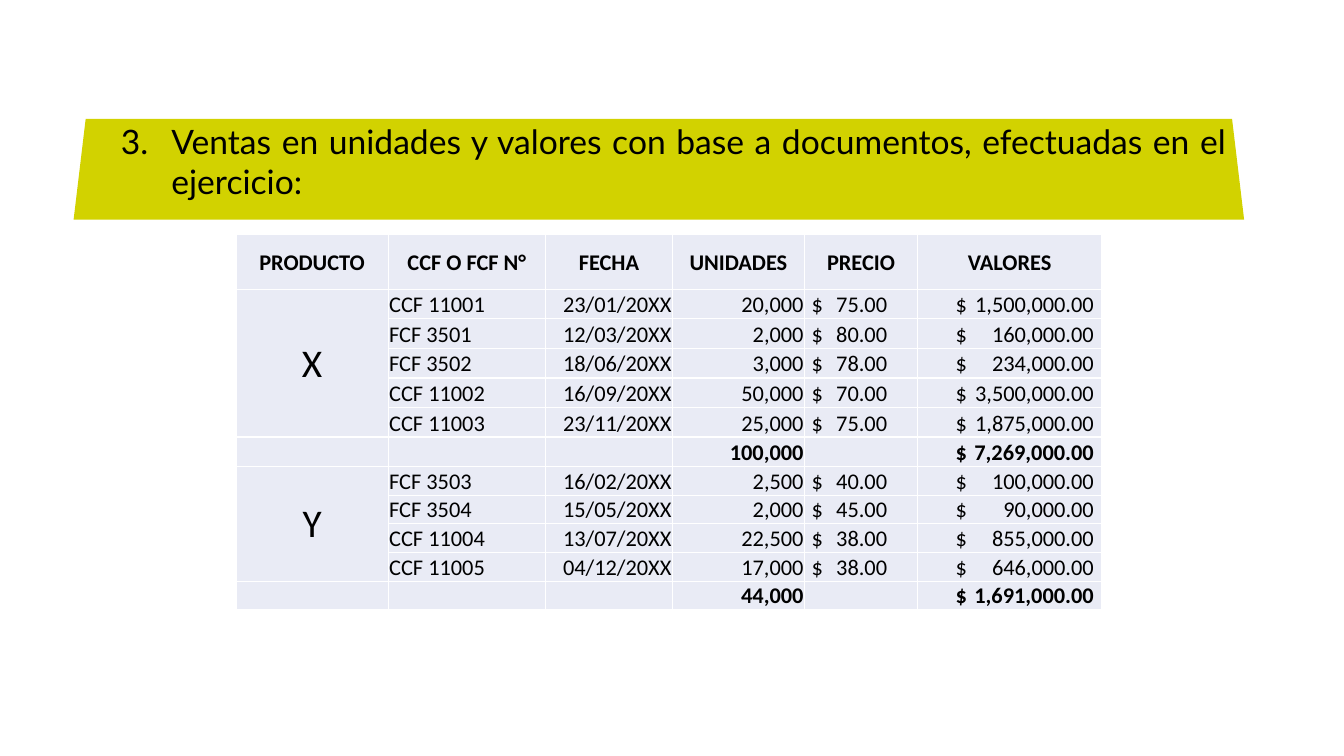
import pptx
import pptx.util
import pptx.dml.color
import pptx.enum.text
import pptx.oxml.ns
import lxml.etree

Inches, Pt = pptx.util.Inches, pptx.util.Pt
ALIGN = pptx.enum.text.PP_ALIGN
ANCHOR = pptx.enum.text.MSO_ANCHOR

HEADERS = ["PRODUCTO", "CCF O FCF N°", "FECHA", "UNIDADES", "PRECIO", "VALORES"]
SALES = {
    "X": [("CCF 11001", "23/01/20XX", 20000, 75),
          ("FCF 3501", "12/03/20XX", 2000, 80),
          ("FCF 3502", "18/06/20XX", 3000, 78),
          ("CCF 11002", "16/09/20XX", 50000, 70),
          ("CCF 11003", "23/11/20XX", 25000, 75)],
    "Y": [("FCF 3503", "16/02/20XX", 2500, 40),
          ("FCF 3504", "15/05/20XX", 2000, 45),
          ("CCF 11004", "13/07/20XX", 22500, 38),
          ("CCF 11005", "04/12/20XX", 17000, 38)],
}
COL_WIDTHS = [1.51, 1.56, 1.26, 1.31, 1.12, 1.83]
ROW_HEIGHTS = [0.54] + [1.76 / 6] * 6 + [1.42 / 5] * 5
# Body columns: alignment, left margin, right tab for the amount
COL_FORMATS = [(ALIGN.CENTER, 0.01, None), (ALIGN.LEFT, 0.01, None),
               (ALIGN.RIGHT, 0.01, None), (ALIGN.RIGHT, 0.01, None),
               (ALIGN.LEFT, 0.07, 0.75), (ALIGN.LEFT, 0.38, 1.37)]


def rgb(color):
    return pptx.dml.color.RGBColor.from_string(color)


def sub(parent, tag, **attrs):
    element = lxml.etree.SubElement(parent, pptx.oxml.ns.qn(tag))
    for name, value in attrs.items():
        element.set(name, str(value))
    return element


def apply(target, values):
    for name, value in values.items():
        setattr(target, name, value)


def money(amount):
    return f"$\t{amount:,.2f}"


class SlideBuilder:
    ink, banner_fill, cell_fill, border = "000000", "D2D200", "E9EBF5", "FFFFFF"
    title_font, table_font = "Lato", "Calibri"

    def __init__(self, prs):
        self.s = prs.slides.add_slide(prs.slide_layouts[5])

    def add_text(self, p, text, font, size, bold=False):
        r = p.add_run()
        r.text = text
        apply(r.font, {"name": font, "size": Pt(size), "bold": bold})
        r.font.color.rgb = rgb(self.ink)

    def banner(self, corners):
        points = [(Inches(x), Inches(y)) for x, y in corners]
        fb = self.s.shapes.build_freeform(*points[0])
        fb.add_line_segments(points[1:], close=True)
        sp = fb.convert_to_shape()
        sp.shadow.inherit = False
        sp.fill.solid()
        sp.fill.fore_color.rgb = rgb(self.banner_fill)
        sp.line.fill.background()
        self.s.shapes.title._element.addprevious(sp._element)

    def title(self, text, number, left, top, width, height):
        sp = self.s.shapes.title
        apply(sp, {"left": Inches(left), "top": Inches(top),
                   "width": Inches(width), "height": Inches(height)})
        tf = sp.text_frame
        apply(tf, {"word_wrap": True, "vertical_anchor": ANCHOR.TOP,
                   "auto_size": pptx.enum.text.MSO_AUTO_SIZE.NONE,
                   "margin_left": Inches(0.1), "margin_right": Inches(0.1),
                   "margin_top": Inches(0.05), "margin_bottom": Inches(0.05)})
        p = tf.paragraphs[0]
        apply(p, {"alignment": ALIGN.JUSTIFY, "line_spacing": 1.0})
        pPr = p._p.get_or_add_pPr()
        pPr.set("marL", str(Inches(0.81)))
        pPr.set("indent", str(Inches(-0.5)))
        sub(pPr, "a:buAutoNum", type="arabicPeriod", startAt=number)
        self.add_text(p, text, self.title_font, 24)

    def table(self, left, top, widths, heights):
        frame = self.s.shapes.add_table(len(heights), len(widths), Inches(left), Inches(top),
                                        Inches(sum(widths)), Inches(sum(heights)))
        table = frame.table
        apply(table, {"first_row": False, "horz_banding": False})
        for column, width in zip(table.columns, widths):
            column.width = Inches(width)
        for row, height in zip(table.rows, heights):
            row.height = Inches(height)
        return table

    def cell(self, cell, text, align, anchor, size=16, bold=False, margin=0.01, tab=None):
        apply(cell, {"vertical_anchor": anchor, "margin_left": Inches(margin),
                     "margin_right": Inches(0.01), "margin_top": Inches(0.01),
                     "margin_bottom": 0})
        tcPr = cell._tc.get_or_add_tcPr()
        for side in ("a:lnL", "a:lnR", "a:lnT", "a:lnB"):
            line = sub(tcPr, side, w=Pt(1))
            sub(sub(line, "a:solidFill"), "a:srgbClr", val=self.border)
        cell.fill.solid()
        cell.fill.fore_color.rgb = rgb(self.cell_fill)
        p = cell.text_frame.paragraphs[0]
        p.alignment = align
        if tab:
            tabs = sub(p._p.get_or_add_pPr(), "a:tabLst")
            sub(tabs, "a:tab", pos=Inches(tab), algn="r")
        if text:
            self.add_text(p, text, self.table_font, size, bold)
        else:
            sub(p._p, "a:endParaRPr", sz=size * 100)


def main():
    prs = pptx.Presentation()
    apply(prs, {"slide_width": Inches(13.33), "slide_height": Inches(7.5)})
    slide = SlideBuilder(prs)

    # Heading on its banner
    slide.banner([(0.85, 1.18), (12.22, 1.18), (12.34, 2.18), (0.73, 2.18)])
    slide.title("Ventas en unidades y valores con base a documentos, efectuadas en el ejercicio:",
                3, 0.79, 1.15, 11.47, 1.05)

    # Table header
    table = slide.table(2.34, 2.33, COL_WIDTHS, ROW_HEIGHTS)
    for col, header in enumerate(HEADERS):
        slide.cell(table.cell(0, col), header, ALIGN.CENTER, ANCHOR.MIDDLE, bold=True)

    # Sales of each product, followed by its totals
    row = 1
    for product, sales in SALES.items():
        rows = [["", document, date, f"{units:,}", money(price), money(units * price)]
                for document, date, units, price in sales]
        rows[0][0] = product
        total_units = sum(units for _, _, units, _ in sales)
        total_value = sum(units * price for _, _, units, price in sales)
        rows.append(["", "", "", f"{total_units:,}", "", money(total_value)])
        table.cell(row, 0).merge(table.cell(row + len(sales) - 1, 0))
        for i, texts in enumerate(rows):
            for col, (text, (align, margin, tab)) in enumerate(zip(texts, COL_FORMATS)):
                slide.cell(table.cell(row + i, col), text, align,
                           ANCHOR.BOTTOM if col else ANCHOR.MIDDLE,
                           size=28 if col == 0 and text else 16,
                           bold=i == len(sales), margin=margin, tab=tab)
        row += len(rows)

    prs.save("out.pptx")


if __name__ == "__main__":
    main()
